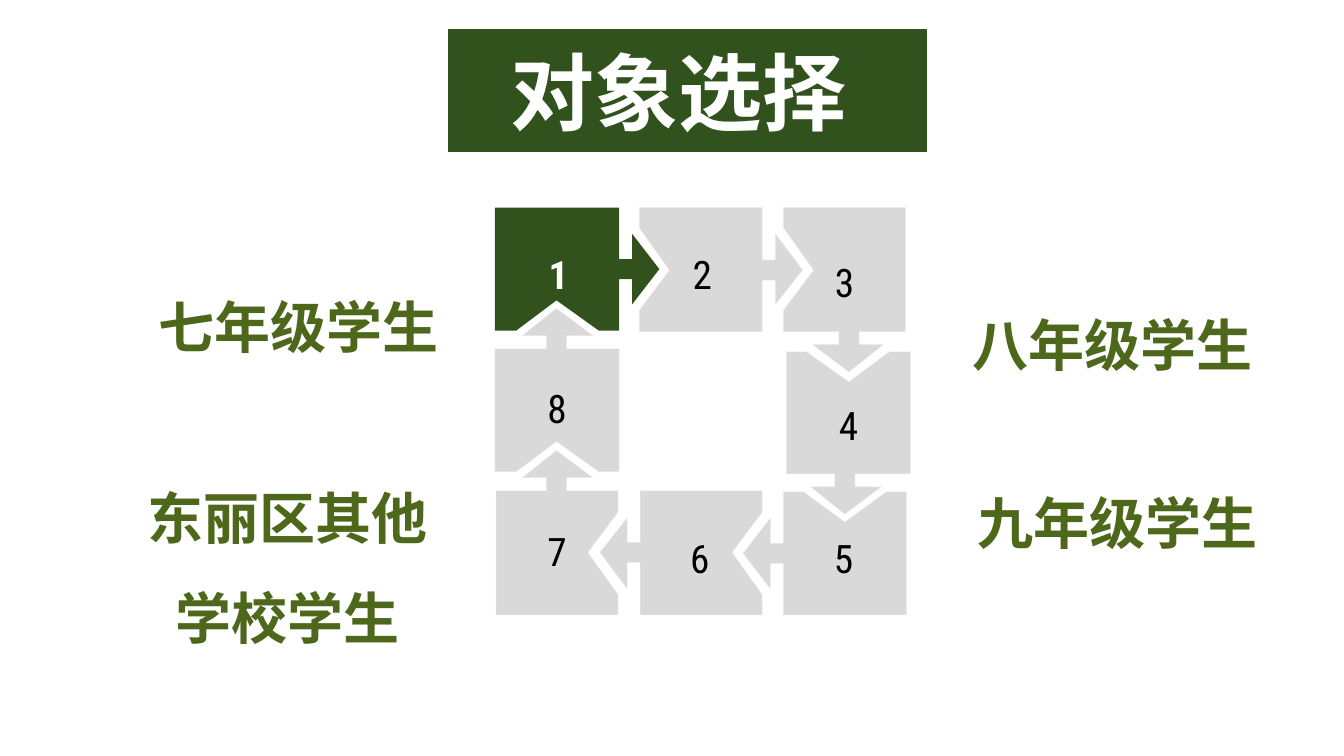
import dataclasses

import pptx
import pptx.dml.color
import pptx.enum.shapes
import pptx.enum.text
import pptx.util

PX = 9144
ANCHOR = pptx.enum.text.MSO_ANCHOR
TOP, RIGHT, BOTTOM, LEFT = range(4)
OUTWARD = [(0, -1), (1, 0), (0, 1), (-1, 0)]
PLAIN_INSETS = [5, 10, 5, 10]
ARROW_INSETS = [31, 47, 31, 47]
NOTCH = [(-41, 0), (0, -30), (41, 0)]
ARROW = [(-10, 0), (-10, 13), (-35, 13), (0, 40), (35, 13), (10, 13), (10, 0)]


@dataclasses.dataclass(frozen=True)
class Theme:
    """Colours, fonts and type sizes of the slide."""
    dark: str = "31521C"
    label: str = "4D671B"
    tile: str = "D9D9D9"
    edge: str = "EAEAEA"
    white: str = "FFFFFF"
    black: str = "000000"
    text_font: str = "Arial"
    number_font: str = "Roboto Condensed"
    title_size: int = 60
    label_size: int = 40
    number_size: int = 28


THEME = Theme()

TILES = [
    ("1", (491, 206, 123, 122), BOTTOM, RIGHT, 0),
    ("2", (634, 206, 122, 123), LEFT, RIGHT, 0),
    ("3", (777, 206, 121, 123), LEFT, BOTTOM, -4),
    ("4", (780, 349, 123, 121), TOP, BOTTOM, 3),
    ("5", (777, 488, 122, 122), TOP, LEFT, 0),
    ("6", (635, 487, 121, 123), RIGHT, LEFT, 0),
    ("7", (492, 487, 121, 123), RIGHT, TOP, 0),
    ("8", (491, 346, 123, 122), BOTTOM, TOP, 0),
]

LABELS = [
    ("东丽区其他学校学生", (118, 446, 334, 200), ANCHOR.MIDDLE),
    ("七年级学生", (129, 257, 334, 99), ANCHOR.MIDDLE),
    ("八年级学生", (933, 275, 341, 99), ANCHOR.MIDDLE),
    ("九年级学生", (943, 446, 331, 99), ANCHOR.TOP),
]


def rgb(colour):
    """Turn a hex string into a colour value."""
    return pptx.dml.color.RGBColor.from_string(colour)


def paint(shape, fill, line=None, width=0):
    """Give a shape its fill and outline, and take off its shadow."""
    shape.shadow.inherit = False
    shape.fill.solid()
    shape.fill.fore_color.rgb = rgb(fill)
    if line:
        shape.line.color.rgb = rgb(line)
        shape.line.width = pptx.util.Pt(width)
    else:
        shape.line.fill.background()


def write(shape, text, font, size, colour, bold=False, spacing=None, anchor=ANCHOR.MIDDLE):
    """Write one centred paragraph into a shape."""
    frame = shape.text_frame
    frame.word_wrap = True
    frame.vertical_anchor = anchor
    para = frame.paragraphs[0]
    para.alignment = pptx.enum.text.PP_ALIGN.CENTER
    if spacing:
        para.line_spacing = spacing
    span = para.add_run()
    span.text = text
    span.font.name = font
    span.font.size = pptx.util.Pt(size)
    span.font.bold = bold
    span.font.color.rgb = rgb(colour)


def add_title(page, box, text):
    """Place the title banner."""
    banner = page.shapes.add_shape(
        pptx.enum.shapes.MSO_SHAPE.RECTANGLE, *(length * PX for length in box))
    paint(banner, THEME.dark, THEME.white, 1)
    write(banner, text, THEME.text_font, THEME.title_size, THEME.white, bold=True)


def add_label(page, box, text, anchor):
    """Place one group label beside the ring."""
    label = page.shapes.add_textbox(*(length * PX for length in box))
    write(label, text, THEME.text_font, THEME.label_size, THEME.label, True, 1.5, anchor)
    label.text_frame.auto_size = pptx.enum.text.MSO_AUTO_SIZE.SHAPE_TO_FIT_TEXT


def tile_outline(box, notch, arrow, shift):
    """List the corners of a tile clockwise, with its notch and arrow."""
    left, top, width, height = box
    right, bottom = left + width, top + height
    corners = [(left, top), (right, top), (right, bottom), (left, bottom)]
    points = []
    for side, (out_x, out_y) in enumerate(OUTWARD):
        start, end = corners[side], corners[(side + 1) % 4]
        middle_x, middle_y = (start[0] + end[0]) / 2, (start[1] + end[1]) / 2
        profile = NOTCH if side == notch else ARROW if side == arrow else []
        offset = shift if side == arrow else 0
        points.append(start)
        for along, out in profile:
            along += offset
            points.append((middle_x - out_y * along + out_x * out,
                           middle_y + out_x * along + out_y * out))
    return points


def add_tile(page, box, number, notch, arrow, shift, active):
    """Place one numbered tile of the ring."""
    points = tile_outline(box, notch, arrow, shift)
    builder = page.shapes.build_freeform(*points[0], scale=PX)
    builder.add_line_segments(points[1:], close=True)
    tile = builder.convert_to_shape()
    if active:
        paint(tile, THEME.dark)
    else:
        paint(tile, THEME.tile, THEME.edge, 0.25)
    insets = list(PLAIN_INSETS)
    insets[arrow] = ARROW_INSETS[arrow]
    frame = tile.text_frame
    frame.margin_top, frame.margin_right, frame.margin_bottom, frame.margin_left = (
        inset * PX for inset in insets)
    colour = THEME.white if active else THEME.black
    write(tile, number, THEME.number_font, THEME.number_size, colour, active, 1.2)


def main():
    """Build the slide and save it."""
    deck = pptx.Presentation()
    deck.slide_width, deck.slide_height = 1333 * PX, 750 * PX
    page = deck.slides.add_slide(deck.slide_layouts[6])
    add_title(page, (444, 28, 476, 124), "对象选择 ")
    for number, box, notch, arrow, shift in TILES:
        add_tile(page, box, number, notch, arrow, shift, active=number == "1")
    for text, box, anchor in LABELS:
        add_label(page, box, text, anchor)
    deck.save("out.pptx")


if __name__ == "__main__":
    main()
